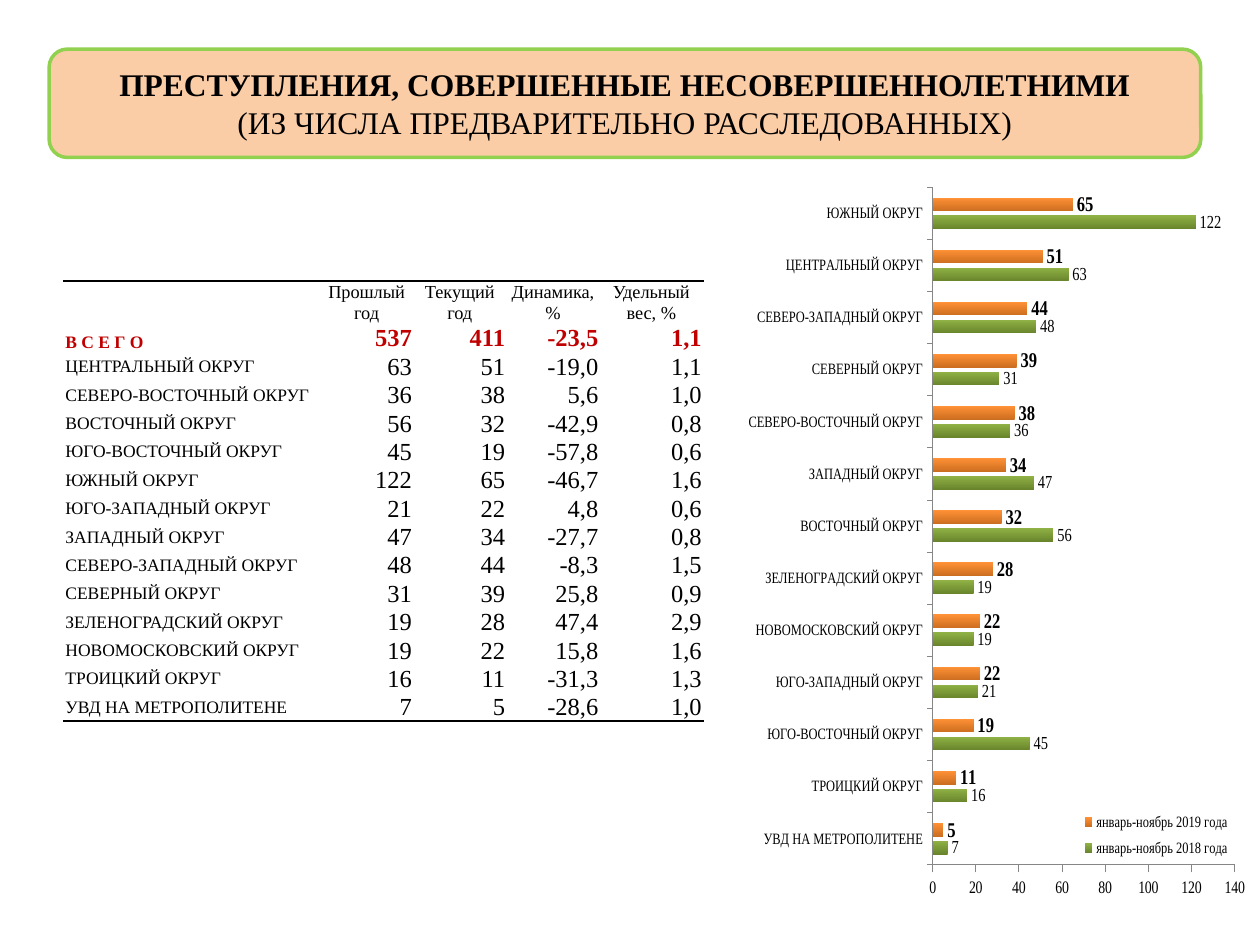
from lxml import etree
from pptx import Presentation
from pptx.chart.data import CategoryChartData
from pptx.dml.color import RGBColor
from pptx.enum.chart import XL_CHART_TYPE, XL_LABEL_POSITION, XL_LEGEND_POSITION, XL_TICK_MARK
from pptx.enum.shapes import MSO_SHAPE
from pptx.enum.text import MSO_ANCHOR, PP_ALIGN
from pptx.oxml import parse_xml
from pptx.oxml.ns import nsdecls, qn
from pptx.util import Inches, Pt

BAR = XL_CHART_TYPE.BAR_CLUSTERED
OUTSIDE_END = XL_LABEL_POSITION.OUTSIDE_END
LEGEND_RIGHT = XL_LEGEND_POSITION.RIGHT
TICK_OUT, TICK_NONE = XL_TICK_MARK.OUTSIDE, XL_TICK_MARK.NONE
ROUNDED = MSO_SHAPE.ROUNDED_RECTANGLE
MIDDLE, BOTTOM = MSO_ANCHOR.MIDDLE, MSO_ANCHOR.BOTTOM
LEFT, CENTER, RIGHT = PP_ALIGN.LEFT, PP_ALIGN.CENTER, PP_ALIGN.RIGHT

FONT = "Times New Roman"
BLACK = RGBColor(0x00, 0x00, 0x00)
WHITE = RGBColor(0xFF, 0xFF, 0xFF)
RED = RGBColor(0xC0, 0x00, 0x00)
PEACH = RGBColor(0xFB, 0xCD, 0xA7)
LIME = RGBColor(0x92, 0xD0, 0x50)
GRAY = RGBColor(0x86, 0x86, 0x86)
GREENS = RGBColor(0x69, 0x85, 0x2C), RGBColor(0x8F, 0xB1, 0x45)
ORANGES = RGBColor(0xCC, 0x6E, 0x20), RGBColor(0xFF, 0x91, 0x36)

TITLE = [
    ("ПРЕСТУПЛЕНИЯ, СОВЕРШЕННЫЕ НЕСОВЕРШЕННОЛЕТНИМИ", True),
    ("(ИЗ ЧИСЛА ПРЕДВАРИТЕЛЬНО РАССЛЕДОВАННЫХ)", False),
]
HEADINGS = ["", "Прошлый год", "Текущий год", "Динамика, %", "Удельный вес, %"]
TOTAL = ["В С Е Г О", "537", "411", "-23,5", "1,1"]
DISTRICTS = [
    ["ЦЕНТРАЛЬНЫЙ ОКРУГ", "63", "51", "-19,0", "1,1"],
    ["СЕВЕРО-ВОСТОЧНЫЙ ОКРУГ", "36", "38", "5,6", "1,0"],
    ["ВОСТОЧНЫЙ ОКРУГ", "56", "32", "-42,9", "0,8"],
    ["ЮГО-ВОСТОЧНЫЙ ОКРУГ", "45", "19", "-57,8", "0,6"],
    ["ЮЖНЫЙ ОКРУГ", "122", "65", "-46,7", "1,6"],
    ["ЮГО-ЗАПАДНЫЙ ОКРУГ", "21", "22", "4,8", "0,6"],
    ["ЗАПАДНЫЙ ОКРУГ", "47", "34", "-27,7", "0,8"],
    ["СЕВЕРО-ЗАПАДНЫЙ ОКРУГ", "48", "44", "-8,3", "1,5"],
    ["СЕВЕРНЫЙ ОКРУГ", "31", "39", "25,8", "0,9"],
    ["ЗЕЛЕНОГРАДСКИЙ ОКРУГ", "19", "28", "47,4", "2,9"],
    ["НОВОМОСКОВСКИЙ ОКРУГ", "19", "22", "15,8", "1,6"],
    ["ТРОИЦКИЙ ОКРУГ", "16", "11", "-31,3", "1,3"],
    ["УВД НА МЕТРОПОЛИТЕНЕ", "7", "5", "-28,6", "1,0"],
]
CHART_ORDER = [12, 11, 3, 5, 10, 9, 2, 6, 1, 8, 7, 0, 4]
COLUMN_WIDTHS = [2.03, 0.74, 0.74, 0.74, 0.82]


def style_font(font, size, bold=False, color=BLACK):
    """Set typeface, size, weight and colour of a font."""
    font.name, font.size, font.bold = FONT, Pt(size), bold
    font.color.rgb = color


def add_title(page, left, top, width, height):
    """Place the rounded title banner."""
    box = page.shapes.add_shape(ROUNDED, left, top, width, height)
    box.shadow.inherit = False
    box.fill.solid()
    box.fill.fore_color.rgb = PEACH
    box.line.color.rgb = LIME
    box.line.width = Pt(2)
    frame = box.text_frame
    frame.word_wrap = True
    frame.vertical_anchor = MIDDLE
    frame.text = "\n".join(text for text, _ in TITLE)
    for para, (_, bold) in zip(frame.paragraphs, TITLE):
        para.alignment = CENTER
        style_font(para.runs[0].font, 18, bold)


def add_border(cell, edge):
    """Draw a black rule on one edge of a cell."""
    cell._tc.get_or_add_tcPr().append(parse_xml(
        f'<a:{edge} {nsdecls("a")} w="12700"><a:solidFill>'
        f'<a:srgbClr val="{BLACK}"/></a:solidFill></a:{edge}>'))


def fill_cell(cell, text, size, bold, color, align, anchor):
    """Write one table cell."""
    cell.margin_left = cell.margin_right = cell.margin_top = Inches(0.01)
    cell.margin_bottom = 0
    cell.vertical_anchor = anchor
    para = cell.text_frame.paragraphs[0]
    para.text = text
    para.alignment = align
    for span in para.runs:
        style_font(span.font, size, bold, color)
    if not text:
        etree.SubElement(para._p, qn("a:endParaRPr"), sz="1000")


def add_district_table(page, left, top, width, height):
    """Place the table of districts between two rules."""
    blank = [""] * len(HEADINGS)
    rows = [blank, HEADINGS, TOTAL, *DISTRICTS, blank]
    last = len(rows) - 1
    table = page.shapes.add_table(
        len(rows), len(HEADINGS), left, top, width, height).table
    table.first_row = table.horz_banding = False
    for column, column_width in zip(table.columns, COLUMN_WIDTHS):
        column.width = Inches(column_width)
    heights = {0: 0.29, 1: 0.34}
    edges = {0: "lnB", 1: "lnT", last - 1: "lnB", last: "lnT"}
    for r, values in enumerate(rows):
        table.rows[r].height = Inches(heights.get(r, 0.22))
        total = values is TOTAL
        color = RED if total else BLACK
        for c, text in enumerate(values):
            cell = table.cell(r, c)
            if r == 1:
                look = 10.5, False, color, CENTER, MIDDLE
            elif c == 0:
                look = 10, total, color, LEFT, BOTTOM if total else MIDDLE
            else:
                look = 14, total, color, RIGHT, BOTTOM
            fill_cell(cell, text, *look)
            if r in edges:
                add_border(cell, edges[r])
            if r == 1 or (c == 0 and 2 < r < last):
                cell.fill.solid()
                cell.fill.fore_color.rgb = WHITE
            else:
                cell.fill.background()


def manual_layout(x, y, width, height, inner=False):
    """Return a chart layout element given in fractions of the chart."""
    target = '<c:layoutTarget val="inner"/>' if inner else ""
    return parse_xml(
        f'<c:layout {nsdecls("c")}><c:manualLayout>{target}'
        '<c:xMode val="edge"/><c:yMode val="edge"/>'
        f'<c:x val="{x}"/><c:y val="{y}"/><c:w val="{width}"/><c:h val="{height}"/>'
        '</c:manualLayout></c:layout>')


def style_axis(axis, size):
    """Give an axis its ticks, line and font."""
    axis.has_major_gridlines = False
    axis.major_tick_mark, axis.minor_tick_mark = TICK_OUT, TICK_NONE
    axis.format.line.color.rgb = GRAY
    style_font(axis.tick_labels.font, size)


def add_district_chart(page, left, top, width, height):
    """Place the bar chart comparing both years by district."""
    ordered = [DISTRICTS[index] for index in CHART_ORDER]
    data = CategoryChartData()
    data.categories = [row[0] for row in ordered]
    for column, year in enumerate((2018, 2019), 1):
        data.add_series(f"январь-ноябрь {year} года", [int(row[column]) for row in ordered])
    chart = page.shapes.add_chart(BAR, left, top, width, height, data).chart
    chart.has_title = False
    style_font(chart.font, 10)
    style_axis(chart.category_axis, 9)
    style_axis(chart.value_axis, 10)
    chart.value_axis.minimum_scale, chart.value_axis.maximum_scale = 0, 140
    chart.value_axis.major_unit = 20
    plot = chart.plots[0]
    plot.gap_width, plot.overlap = 150, -31
    plot.vary_by_categories = False
    looks = [(GREENS, 10.5, False), (ORANGES, 12, True)]
    for series, (colors, size, bold) in zip(plot.series, looks):
        fill = series.format.fill
        fill.gradient()
        fill.gradient_angle = 90
        for stop, color in zip(fill.gradient_stops, colors):
            stop.color.rgb = color
        labels = series.data_labels
        labels.show_value = True
        labels.position = OUTSIDE_END
        style_font(labels.font, size, bold)
    chart.has_legend = True
    legend = chart.legend
    legend.position = LEGEND_RIGHT
    legend.include_in_layout = False
    style_font(legend.font, 9)
    legend._element.find(qn("c:legendPos")).addnext(manual_layout(0.6, 0.86, 0.56, 0.08))
    area = chart._chartSpace.chart.plotArea
    for layout in area.findall(qn("c:layout")):
        area.remove(layout)
    area.insert(0, manual_layout(0.41, 0.03, 0.77, 0.91, inner=True))


def main():
    """Build the slide and save the deck."""
    deck = Presentation()
    deck.slide_width, deck.slide_height = Inches(10), Inches(7.5)
    page = deck.slides.add_slide(deck.slide_layouts[6])
    add_title(page, Inches(0.39), Inches(0.39), Inches(9.14), Inches(0.86))
    add_district_chart(page, Inches(5.94), Inches(1.31), Inches(3.94), Inches(5.91))
    add_district_table(page, Inches(0.51), Inches(1.94), Inches(5.07), Inches(4.29))
    deck.save("out.pptx")


if __name__ == "__main__":
    main()
